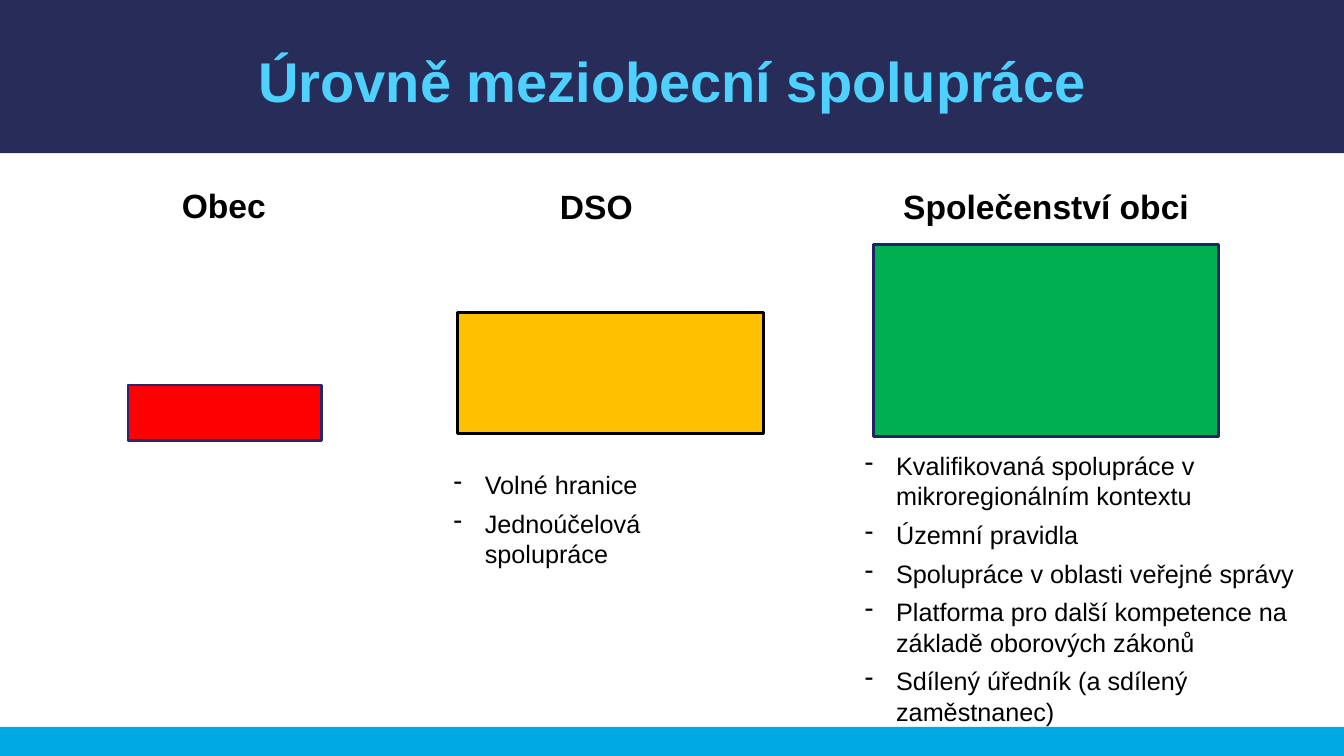
from dataclasses import dataclass
from lxml.etree import SubElement
from pptx import Presentation
from pptx.dml.color import RGBColor
from pptx.enum.shapes import MSO_SHAPE
from pptx.enum.text import MSO_ANCHOR, MSO_AUTO_SIZE, PP_ALIGN
from pptx.oxml.ns import qn
from pptx.util import Inches, Pt


@dataclass(frozen=True)
class Theme:
    font: str = "Arial"
    navy: str = "272D58"
    sky: str = "4FD1FF"
    cyan: str = "00A9E2"
    ink: str = "000000"
    title: int = 40
    head: int = 24
    body: int = 18
    border: int = 2
    gap: int = 6
    indent: float = 0.31


THEME = Theme()
WIDE, HIGH = 13.33, 7.5
TOP, FOOT = 1.52, 0.29

TITLE = "Úrovně meziobecní spolupráce"
LEVELS = [
    {
        "name": "Obec", "head": (1.26, 1.79, 1.92, 0.5),
        "box": (1.27, 3.82, 1.92, 0.55), "fill": "FF0000", "line": "262671",
    },
    {
        "name": "DSO", "head": (4.4, 1.8, 3.03, 0.5),
        "box": (4.54, 3.1, 3.03, 1.2), "fill": "FFC000", "line": "000000",
        "list": (4.4, 4.61, 2.68, 1.48),
        "points": ["Volné hranice", "Jednoúčelová spolupráce"],
    },
    {
        "name": "Společenství obci", "head": (8.67, 1.8, 3.41, 0.5),
        "box": (8.66, 2.43, 3.43, 1.9), "fill": "00B050", "line": "212166",
        "list": (8.48, 4.42, 4.69, 3.25),
        "points": [
            "Kvalifikovaná spolupráce v mikroregionálním kontextu",
            "Územní pravidla",
            "Spolupráce v oblasti veřejné správy",
            "Platforma pro další kompetence na základě oborových zákonů",
            "Sdílený úředník (a sdílený zaměstnanec)",
        ],
    },
]


def place(at):
    return [Inches(n) for n in at]


def add_box(slide, at, fill, line=None):
    box = slide.shapes.add_shape(MSO_SHAPE.RECTANGLE, *place(at))
    box.shadow.inherit = False
    box.fill.solid()
    box.fill.fore_color.rgb = RGBColor.from_string(fill)
    if line:
        box.line.color.rgb = RGBColor.from_string(line)
        box.line.width = Pt(THEME.border)
    else:
        box.line.fill.background()
    return box


def add_run(para, text, size, color=THEME.ink, bold=False):
    run = para.add_run()
    run.text = text
    font = run.font
    font.name, font.size, font.bold = THEME.font, Pt(size), bold
    font.color.rgb = RGBColor.from_string(color)


def set_frame(frame):
    frame.word_wrap = True
    frame.auto_size = MSO_AUTO_SIZE.NONE
    frame.vertical_anchor = MSO_ANCHOR.TOP


def add_text(slide, at):
    frame = slide.shapes.add_textbox(*place(at)).text_frame
    set_frame(frame)
    return frame


def add_dash(para):
    para.space_after = Pt(THEME.gap)
    props = para._p.get_or_add_pPr()
    props.set("marL", str(Inches(THEME.indent)))
    props.set("indent", str(-Inches(THEME.indent)))
    SubElement(props, qn("a:buFontTx"))
    SubElement(props, qn("a:buChar"), char="-")


def add_list(slide, at, points):
    frame = add_text(slide, at)
    for i, point in enumerate(points):
        para = frame.add_paragraph() if i else frame.paragraphs[0]
        add_dash(para)
        add_run(para, point, THEME.body)


def add_title(slide):
    title = slide.shapes.title
    title.left, title.top, title.width, title.height = place((0, 0.41, WIDE, 0.77))
    set_frame(title.text_frame)
    para = title.text_frame.paragraphs[0]
    para.alignment = PP_ALIGN.CENTER
    add_run(para, TITLE, THEME.title, THEME.sky, True)
    band = add_box(slide, (0, 0, WIDE, TOP), THEME.navy)
    title.element.addprevious(band.element)


def add_level(slide, level):
    add_box(slide, level["box"], level["fill"], level["line"])
    para = add_text(slide, level["head"]).paragraphs[0]
    para.alignment = PP_ALIGN.CENTER
    add_run(para, level["name"], THEME.head, bold=True)
    if "points" in level:
        add_list(slide, level["list"], level["points"])


def main():
    deck = Presentation()
    deck.slide_width, deck.slide_height = place((WIDE, HIGH))
    slide = deck.slides.add_slide(deck.slide_layouts[5])
    add_title(slide)
    for level in LEVELS:
        add_level(slide, level)
    add_box(slide, (0, HIGH - FOOT, WIDE, FOOT), THEME.cyan)
    deck.save("out.pptx")


if __name__ == "__main__":
    main()
